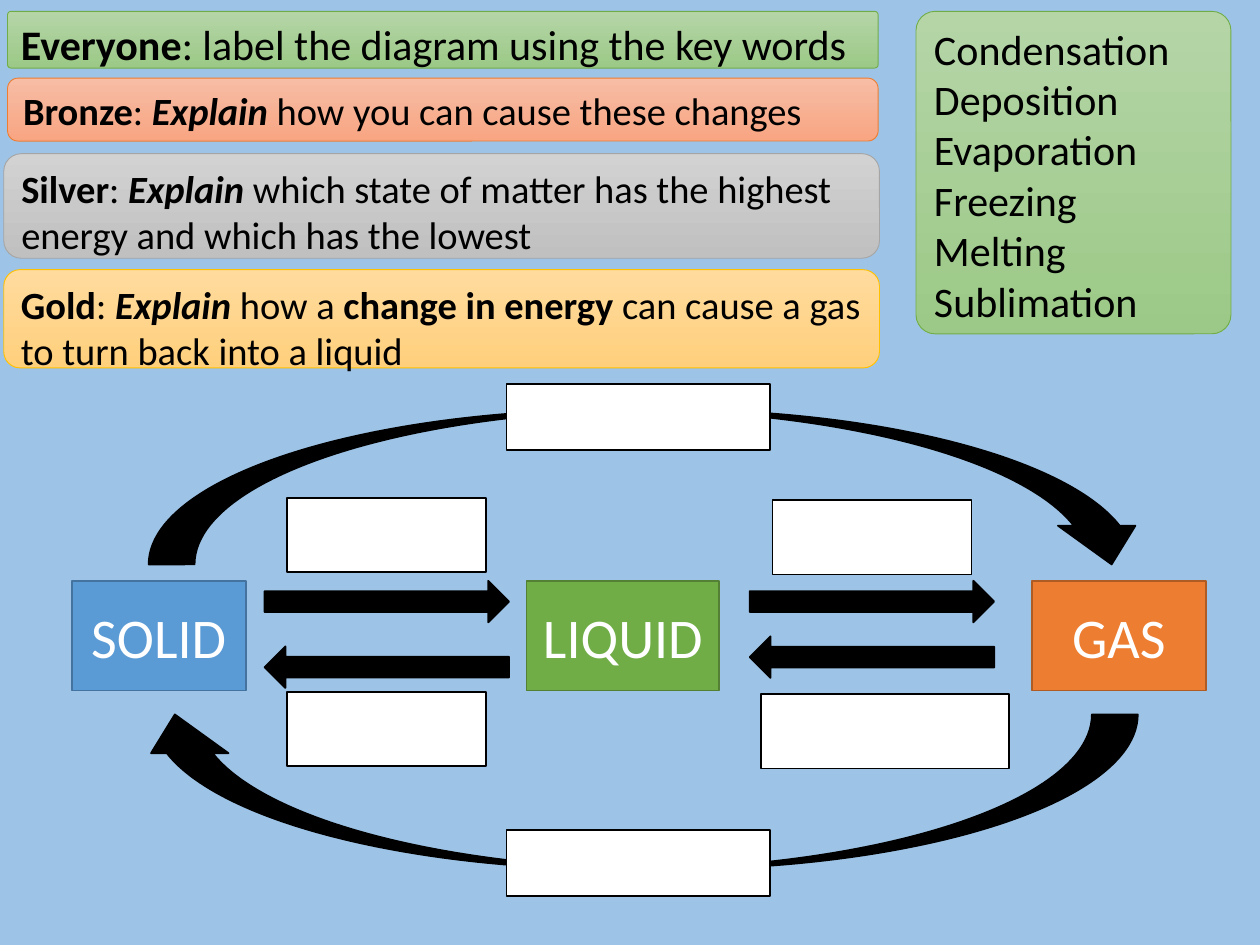
from dataclasses import dataclass

from pptx import Presentation
from pptx.dml.color import RGBColor
from pptx.enum.shapes import MSO_SHAPE
from pptx.enum.text import MSO_ANCHOR, PP_ALIGN
from pptx.util import Inches, Pt

BLACK, WHITE = "000000", "FFFFFF"
GREEN = ("B5D5A7", "9CC987", "70AD47")  # gradient top, gradient bottom, line


@dataclass
class Box:
    left: float
    top: float
    width: float
    height: float


@dataclass
class State:
    name: str
    box: Box
    fill: str
    line: str


@dataclass
class Panel:
    box: Box
    colors: tuple[str, str, str]
    size: int
    lines: list  # each line is a list of (text, style); style holds "b" and/or "i"
    corner: float = 0.167


def rgb(color: str) -> RGBColor:
    return RGBColor.from_string(color)


def add_block(s, kind, box: Box, fill: str, line: str, width: float = 1):
    sp = s.shapes.add_shape(kind, Inches(box.left), Inches(box.top),
                            Inches(box.width), Inches(box.height))
    sp.shadow.inherit = False
    sp.fill.solid()
    sp.fill.fore_color.rgb = rgb(fill)
    sp.line.color.rgb = rgb(line)
    sp.line.width = Pt(width)
    return sp


def add_state(s, state: State) -> None:
    sp = add_block(s, MSO_SHAPE.RECTANGLE, state.box, state.fill, state.line)
    tf = sp.text_frame
    tf.vertical_anchor = MSO_ANCHOR.MIDDLE
    p = tf.paragraphs[0]
    p.text = state.name
    p.alignment = PP_ALIGN.CENTER
    p.font.name, p.font.size = "Calibri", Pt(32)
    p.font.color.rgb = rgb(WHITE)


def add_arrow(s, kind, box: Box, rotation: int) -> None:
    sp = add_block(s, kind, box, BLACK, BLACK)
    sp.rotation = rotation
    if kind == MSO_SHAPE.CURVED_DOWN_ARROW:
        for i, value in enumerate((0.296, 0.5, 0.25)):
            sp.adjustments[i] = value


def add_panel(s, panel: Panel) -> None:
    top, bottom, line = panel.colors
    sp = add_block(s, MSO_SHAPE.ROUNDED_RECTANGLE, panel.box, top, line, 0.5)
    sp.adjustments[0] = panel.corner
    sp.fill.gradient()
    sp.fill.gradient_angle = 270
    for stop, color, position in zip(sp.fill.gradient_stops, (top, bottom), (0, 1)):
        stop.color.rgb = rgb(color)
        stop.position = position
    tf = sp.text_frame
    tf.word_wrap = True
    tf.vertical_anchor = MSO_ANCHOR.TOP
    for i, runs in enumerate(panel.lines):
        p = tf.add_paragraph() if i else tf.paragraphs[0]
        p.alignment = PP_ALIGN.LEFT
        p.font.name, p.font.size = "Calibri", Pt(panel.size)
        p.font.color.rgb = rgb(BLACK)
        for text, style in runs:
            r = p.add_run()
            r.text = text
            r.font.bold, r.font.italic = "b" in style, "i" in style


STATES = [
    State("SOLID", Box(0.57, 4.61, 1.38, 0.87), "5B9BD5", "43739E"),
    State("LIQUID", Box(4.18, 4.61, 1.53, 0.87), "70AD47", "538035"),
    State("GAS", Box(8.19, 4.61, 1.38, 0.87), "ED7D31", "AF5C24"),
]

# Arrows between neighbouring states: left, top, rotation
STRAIGHT_ARROWS = [(2.1, 4.61, 0), (5.95, 4.61, 0), (5.95, 5.05, 180), (2.1, 5.13, 180)]
# Arrows between solid and gas
CURVED_ARROWS = [(1.18, 3.25, 0), (1.08, 5.67, 180)]

# Empty boxes for the key words
ANSWERS = [
    Box(2.28, 3.95, 1.58, 0.59), Box(6.13, 3.97, 1.58, 0.59),
    Box(2.28, 5.49, 1.58, 0.59), Box(6.04, 5.51, 1.97, 0.59),
    Box(4.02, 3.05, 2.09, 0.52), Box(4.02, 6.59, 2.09, 0.52),
]

KEY_WORDS = ["Condensation", "Deposition", "Evaporation",
             "Freezing", "Melting", "Sublimation"]

PANELS = [
    Panel(Box(0.06, 0.62, 6.91, 0.5), ("F7BDA5", "F8A582", "ED7D31"), 22,
          [[("Bronze", "b"), (": ", ""), ("Explain", "bi"),
            (" how you can cause these changes", "")]]),
    Panel(Box(0.03, 1.22, 6.95, 0.83), ("D2D2D2", "C0C0C0", "A5A5A5"), 22,
          [[("Silver", "b"), (": ", ""), ("Explain ", "bi"),
            ("which state of matter has the highest energy and which has the lowest", "")]]),
    Panel(Box(0.03, 2.14, 6.95, 0.78), ("FFDB9E", "FFD07C", "FFC000"), 22,
          [[("Gold", "b"), (": ", ""), ("Explain", "bi"), (" how a ", ""),
            ("change in energy ", "b"),
            ("can cause a gas to turn back into a liquid", "")]]),
    Panel(Box(7.27, 0.09, 2.5, 2.56), GREEN, 24,
          [[(word, "")] for word in KEY_WORDS], 0.061),
    Panel(Box(0.06, 0.09, 6.91, 0.45), GREEN, 24,
          [[("Everyone", "b"), (": label the diagram using the key words", "")]], 0.061),
]


def main() -> None:
    prs = Presentation()
    prs.slide_width, prs.slide_height = Inches(10), Inches(7.5)
    s = prs.slides.add_slide(prs.slide_layouts[6])
    s.background.fill.solid()
    s.background.fill.fore_color.rgb = rgb("9DC3E6")

    # Diagram: states, arrows, then the answer boxes on top
    for state in STATES:
        add_state(s, state)
    for left, top, rotation in STRAIGHT_ARROWS:
        add_arrow(s, MSO_SHAPE.RIGHT_ARROW, Box(left, top, 1.94, 0.33), rotation)
    for left, top, rotation in CURVED_ARROWS:
        add_arrow(s, MSO_SHAPE.CURVED_DOWN_ARROW, Box(left, top, 7.95, 1.23), rotation)
    for box in ANSWERS:
        add_block(s, MSO_SHAPE.RECTANGLE, box, WHITE, BLACK)

    # Tasks and key words
    for panel in PANELS:
        add_panel(s, panel)

    prs.save("out.pptx")


if __name__ == "__main__":
    main()
